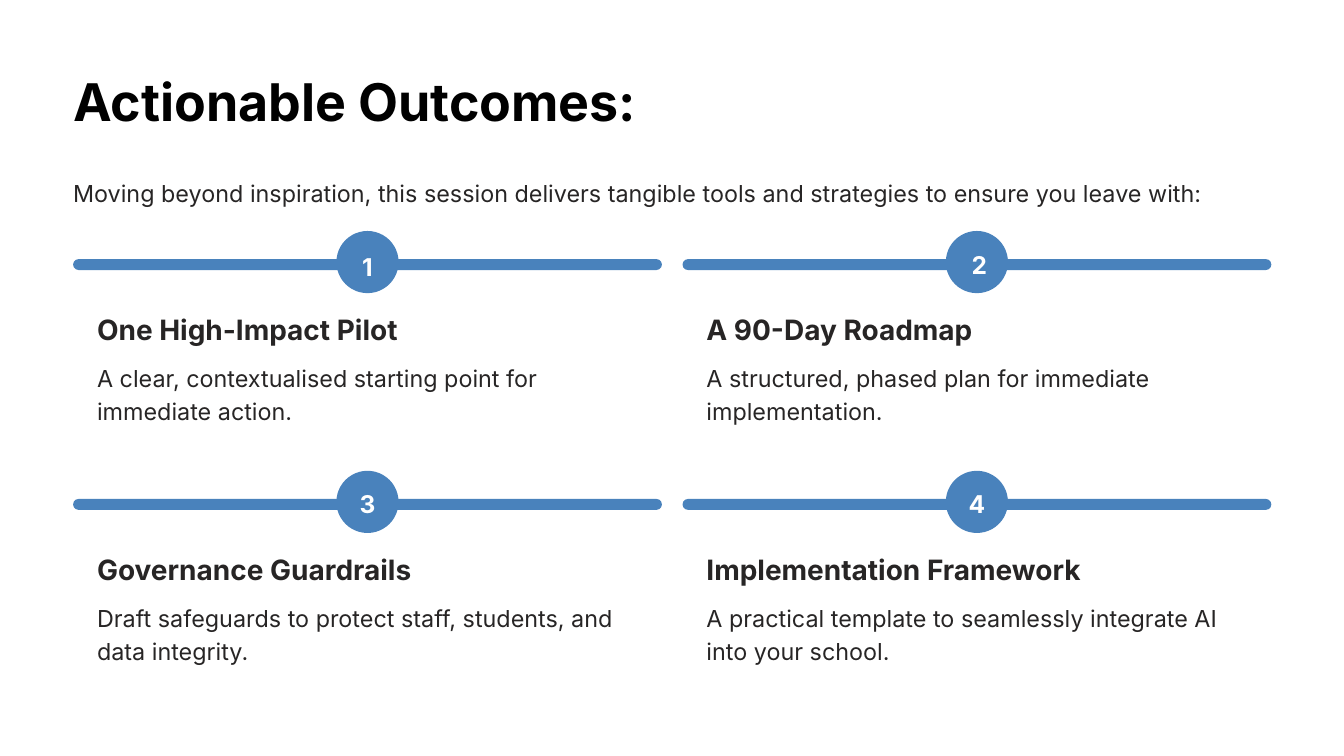
import pptx
import pptx.util
import pptx.dml.color
import pptx.enum.shapes
import pptx.enum.text

Inches = pptx.util.Inches
Pt = pptx.util.Pt
Align = pptx.enum.text.PP_ALIGN
Shape = pptx.enum.shapes.MSO_SHAPE

FONT = "Inter"
BLACK, INK, BLUE, WHITE = "000000", "272525", "4982BC", "FFFFFF"

TITLE = "Actionable Outcomes:"
INTRO = (
    "Moving beyond inspiration, this session delivers tangible tools "
    "and strategies to ensure you leave with:"
)
OUTCOMES = [
    ("1", "One High-Impact Pilot",
     "A clear, contextualised starting point for immediate action.", (0.22, 0.13)),
    ("2", "A 90-Day Roadmap",
     "A structured, phased plan for immediate implementation.", (0.25, 0.1)),
    ("3", "Governance Guardrails",
     "Draft safeguards to protect staff, students, and data integrity.", (0.22, 0.1)),
    ("4", "Implementation Framework",
     "A practical template to seamlessly integrate AI into your school.", (0.22, 0.1)),
]

LEFT, TOP = 0.87, 2.75
COLUMN_STEP, ROW_STEP = 7.255, 2.855
BAR_WIDTH, BAR_HEIGHT = 7.01, 0.13
BADGE_SIZE = 0.74
TEXT_INDENT, TEXT_WIDTH = 0.285, 6.45


def color(value):
    return pptx.dml.color.RGBColor.from_string(value)


def write(box, text, size, line, fill, bold=False, align=Align.LEFT):
    frame = box.text_frame
    frame.word_wrap = True
    frame.auto_size = pptx.enum.text.MSO_AUTO_SIZE.NONE
    frame.vertical_anchor = pptx.enum.text.MSO_ANCHOR.TOP
    frame.margin_left = frame.margin_right = 0
    frame.margin_top = frame.margin_bottom = 0
    para = frame.paragraphs[0]
    para.alignment = align
    para.line_spacing = Pt(line)
    span = para.add_run()
    span.text = text
    span.font.name = FONT
    span.font.size = Pt(size)
    span.font.bold = bold
    span.font.color.rgb = color(fill)


def add_text(page, left, top, width, height, *content, **style):
    box = page.shapes.add_textbox(
        Inches(left), Inches(top), Inches(width), Inches(height))
    write(box, *content, **style)


def add_pill(page, left, top, width, height):
    pill = page.shapes.add_shape(
        Shape.ROUNDED_RECTANGLE,
        Inches(left), Inches(top), Inches(width), Inches(height))
    pill.adjustments[0] = 0.5
    pill.shadow.inherit = False
    pill.fill.solid()
    pill.fill.fore_color.rgb = color(BLUE)
    pill.line.fill.background()


def add_outcome(page, left, top, number, heading, detail, number_offset):
    badge_left = left + (BAR_WIDTH - BADGE_SIZE) / 2
    across, down = number_offset
    add_pill(page, left, top + 0.335, BAR_WIDTH, BAR_HEIGHT)
    add_pill(page, badge_left, top, BADGE_SIZE, BADGE_SIZE)
    add_text(page, badge_left + across, top + down, 0.3, 0.37,
             number, 21, 34, WHITE, bold=True, align=Align.CENTER)
    text_left = left + TEXT_INDENT
    add_text(page, text_left, top + 0.99, TEXT_WIDTH, 0.39,
             heading, 24, 27.5, INK, bold=True)
    add_text(page, text_left, top + 1.525, TEXT_WIDTH, 0.79,
             detail, 20, 28.5, INK)


def main():
    deck = pptx.Presentation()
    deck.slide_width, deck.slide_height = Inches(16), Inches(9)
    page = deck.slides.add_slide(deck.slide_layouts.get_by_name("Title Only"))
    page.background.fill.solid()
    page.background.fill.fore_color.rgb = color(WHITE)

    title = page.shapes.title
    title.left, title.top = Inches(LEFT), Inches(0.8)
    title.width, title.height = Inches(6.88), Inches(0.78)
    write(title, TITLE, 44.5, 55.5, BLACK, bold=True)
    add_text(page, LEFT, 2.07, 14.26, 0.4, INTRO, 20, 28.5, INK)

    for index, outcome in enumerate(OUTCOMES):
        row, column = divmod(index, 2)
        add_outcome(page, LEFT + column * COLUMN_STEP,
                    TOP + row * ROW_STEP, *outcome)

    deck.save("out.pptx")


if __name__ == "__main__":
    main()
